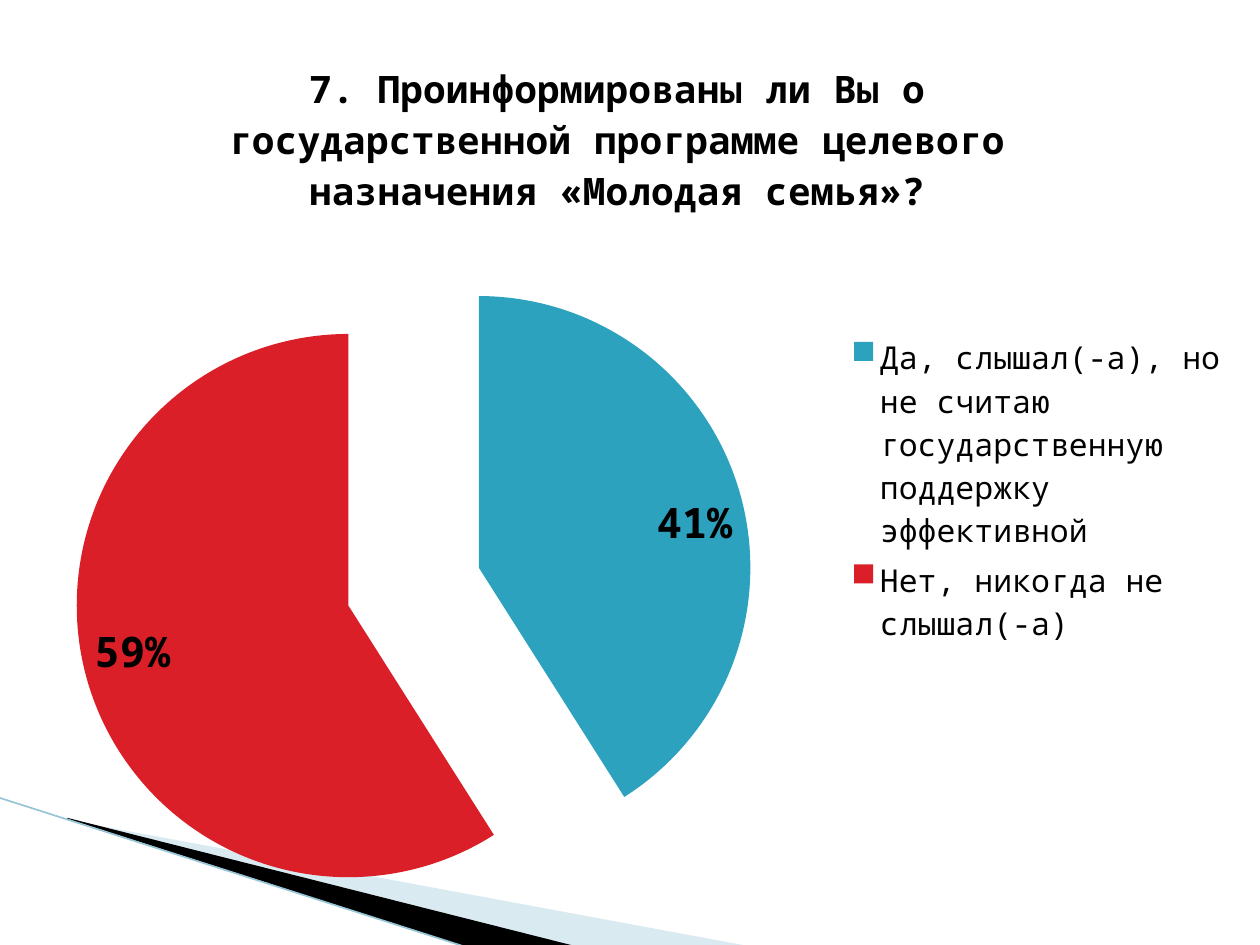
from dataclasses import dataclass

from lxml import etree
from pptx import Presentation
from pptx import util as u
from pptx.chart.data import CategoryChartData
from pptx.dml.color import RGBColor
from pptx.enum import chart as ch
from pptx.enum import shapes
from pptx.oxml import parse_xml
from pptx.oxml.ns import nsdecls, qn

FONT = "Noto Sans Mono"
QUESTION = ("7. Проинформированы ли Вы о государственной программе "
            "целевого назначения «Молодая семья»?")


@dataclass
class Wedge:
    points: list[tuple[float, float]]
    color: str
    opacity: int = 100


@dataclass
class Answer:
    label: str
    share: float
    color: str


WEDGES = [
    Wedge([(0.55, 6.51), (5.95, 7.51), (4.56, 7.51), (0.55, 6.5)], "A0CBDC", 40),
    Wedge([(0.53, 6.49), (4.57, 7.51), (3.72, 7.52), (0.54, 6.5)], "000000"),
]
ANSWERS = [
    Answer("Да, слышал(-а), но не считаю государственную поддержку эффективной",
           0.41, "2DA2BF"),
    Answer("Нет, никогда не слышал(-а)", 0.59, "DA1F28"),
]


def rgb(value: str) -> RGBColor:
    return RGBColor.from_string(value)


def style_font(font, size: float, bold: bool) -> None:
    font.name = FONT
    font.size = u.Pt(size)
    font.bold = bold
    font.color.rgb = rgb("000000")


def draw_wedge(slide, wedge: Wedge) -> None:
    start, *rest = [(u.Inches(x), u.Inches(y)) for x, y in wedge.points]
    builder = slide.shapes.build_freeform(*start)
    builder.add_line_segments(rest, close=True)
    ribbon = builder.convert_to_shape()
    ribbon.shadow.inherit = False
    ribbon.fill.solid()
    ribbon.fill.fore_color.rgb = rgb(wedge.color)
    ribbon.line.fill.background()
    if wedge.opacity < 100:
        color = ribbon.fill._xPr.find(".//" + qn("a:srgbClr"))
        etree.SubElement(color, qn("a:alpha")).set("val", str(wedge.opacity * 1000))


def draw_edge(slide) -> None:
    edge = slide.shapes.add_connector(
        shapes.MSO_CONNECTOR.STRAIGHT,
        u.Inches(-0.01), u.Inches(6.33), u.Inches(3.71), u.Inches(7.52))
    edge.line.color.rgb = rgb("97C5D8")
    edge.line.width = u.Pt(0.95)
    etree.SubElement(edge._element.spPr, qn("a:effectLst"))


def place(element, x: float, y: float, w: float, h: float, inner: bool = False):
    target = '<c:layoutTarget val="inner"/>' if inner else ""
    layout = parse_xml(
        f'<c:layout {nsdecls("c")}><c:manualLayout>{target}'
        '<c:xMode val="edge"/><c:yMode val="edge"/>'
        f'<c:x val="{x}"/><c:y val="{y}"/><c:w val="{w}"/><c:h val="{h}"/>'
        '</c:manualLayout></c:layout>')
    for old in element.findall(qn("c:layout")):
        element.remove(old)
    position = element.find(qn("c:legendPos"))
    if position is None:
        element.insert(0, layout)
    else:
        position.addnext(layout)


def draw_survey(slide) -> None:
    survey = CategoryChartData(number_format="0%")
    survey.categories = [answer.label for answer in ANSWERS]
    survey.add_series(QUESTION, [answer.share for answer in ANSWERS])
    chart = slide.shapes.add_chart(
        ch.XL_CHART_TYPE.PIE, u.Inches(0), u.Inches(0.21),
        u.Inches(9.8), u.Inches(7.29), survey).chart
    style_font(chart.font, 18, False)

    chart.has_title = True
    heading = chart.chart_title.text_frame.paragraphs[0].add_run()
    heading.text = QUESTION
    style_font(heading.font, 21.6, True)
    chart.chart_title.include_in_layout = False

    chart.has_legend = True
    chart.legend.position = ch.XL_LEGEND_POSITION.RIGHT
    chart.legend.include_in_layout = False
    style_font(chart.legend.font, 18, False)
    place(chart.legend._element, 0.68, 0.33, 0.32, 0.35)

    pie = chart.plots[0]
    pie.vary_by_categories = True
    place(chart._chartSpace.chart.plotArea, 0.06, 0.24, 0.55, 0.74, inner=True)
    shares = pie.series[0]
    for index, answer in enumerate(ANSWERS):
        fill = shares.points[index].format.fill
        fill.solid()
        fill.fore_color.rgb = rgb(answer.color)
    explosion = parse_xml(f'<c:explosion {nsdecls("c")} val="25"/>')
    shares._element.find(qn("c:dPt")).addprevious(explosion)

    labels = shares.data_labels
    labels.show_value = True
    labels.show_percentage = False
    labels.number_format = "0%"
    labels.number_format_is_linked = False
    labels.position = ch.XL_LABEL_POSITION.INSIDE_END
    style_font(labels.font, 24, True)


def main() -> None:
    deck = Presentation()
    deck.slide_width, deck.slide_height = u.Inches(10), u.Inches(7.5)
    slide = deck.slides.add_slide(deck.slide_layouts[6])
    for wedge in WEDGES:
        draw_wedge(slide, wedge)
    draw_edge(slide)
    draw_survey(slide)
    deck.save("out.pptx")


if __name__ == "__main__":
    main()
